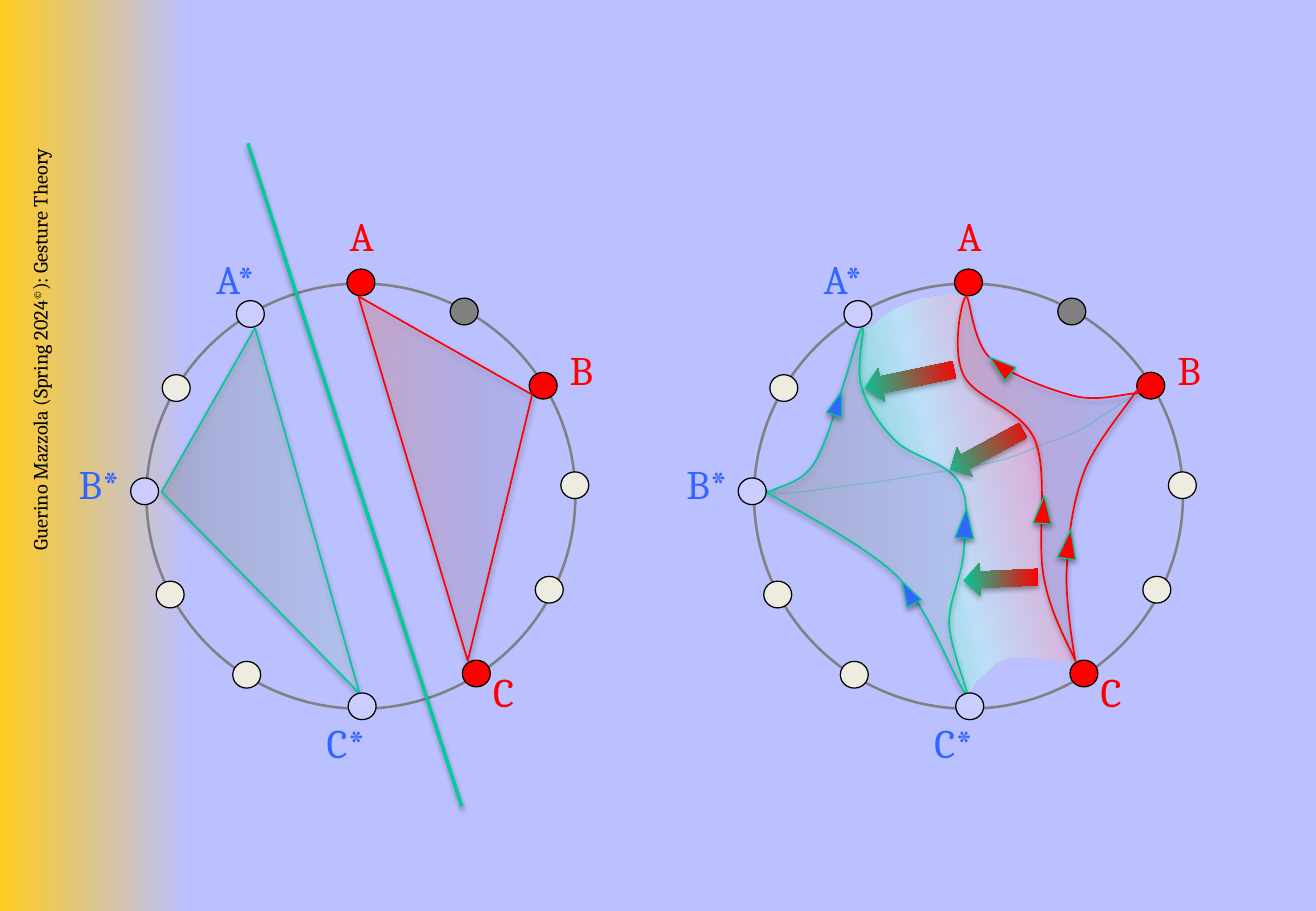
from lxml.etree import SubElement
from pptx import Presentation
from pptx.dml.color import RGBColor
from pptx.enum.shapes import MSO_CONNECTOR, MSO_SHAPE
from pptx.enum.text import PP_ALIGN
from pptx.oxml.ns import qn
from pptx.util import Inches, Pt

RED, BLUE, TEAL, GREEN = "FF0000", "3366FF", "00C896", "00CC99"
LILAC, IVORY, GRAY, BLACK = "CCCCFF", "EEECE1", "808080", "000000"
CLOCK_STEP = 5
RED_FADE = [(0, "FFA5B1", 40), (100, "ADADEB", 18)]
GREEN_FADE = [(0, "999999", 28), (100, "C2FFF0", 18)]
RIBBON_FADE = [(0, GREEN, 75), (43, "C2FFF0", 48), (71, "FFA5B1", 43), (100, RED, 30)]
ARROW_FADE = [(0, GREEN, 100), (100, RED, 100)]

DOTS = [
    (3.71, 2.45, GRAY), (4.36, 3.06, RED), (2.86, 2.21, RED), (4.62, 3.88, IVORY),
    (1.95, 2.47, LILAC), (1.34, 3.08, IVORY), (1.92, 5.44, IVORY), (1.29, 4.78, IVORY),
    (3.81, 5.43, RED), (4.41, 4.74, IVORY),
]
TOP_DOTS = [(2.87, 5.7, LILAC), (1.08, 3.93, LILAC)]
LABELS = [
    ("A", 2.78, 1.69, 0.44, RED), ("B", 4.59, 2.79, 0.43, RED), ("C", 3.96, 5.44, 0.43, RED),
    ("A*", 1.68, 2.04, 0.61, BLUE), ("B*", 0.55, 3.73, 0.6, BLUE), ("C*", 2.59, 5.86, 0.59, BLUE),
]
RED_TRIANGLE = [(2.95, 2.44), (4.38, 3.25), (3.85, 5.44)]
GREEN_TRIANGLE = [(2.1, 2.7), (2.96, 5.71), (1.33, 4.05)]
RIBBON = [
    (7.95, 2.47), (7.9, 2.4, 7.73, 2.44, 7.63, 2.45), (7.53, 2.47, 7.44, 2.51, 7.36, 2.55),
    (7.28, 2.59, 7.21, 2.67, 7.16, 2.7), (7.11, 2.72, 7.1, 2.66, 7.08, 2.71),
    (7.06, 2.76, 7.06, 2.9, 7.06, 2.99), (7.06, 3.09, 7.05, 3.17, 7.1, 3.27),
    (7.14, 3.36, 7.25, 3.5, 7.32, 3.58), (7.4, 3.66, 7.48, 3.71, 7.56, 3.75),
    (7.63, 3.79, 7.7, 3.79, 7.76, 3.83), (7.83, 3.87, 7.89, 3.96, 7.92, 3.99),
    (7.95, 4.01, 7.89, 3.95, 7.93, 4), (7.87, 4.06, 7.95, 4.14, 7.95, 4.24),
    (7.95, 4.33, 7.95, 4.46, 7.93, 4.56), (7.91, 4.67, 7.86, 4.78, 7.84, 4.86),
    (7.81, 4.95, 7.78, 4.93, 7.79, 5.07), (7.81, 5.21, 7.88, 5.61, 7.93, 5.69),
    (7.98, 5.77, 8.01, 5.61, 8.08, 5.57), (8.15, 5.52, 8.19, 5.44, 8.32, 5.42),
    (8.46, 5.4, 8.79, 5.46, 8.87, 5.46), (8.96, 5.45, 8.88, 5.49, 8.84, 5.4),
    (8.8, 5.32, 8.69, 5.08, 8.65, 4.96), (8.6, 4.84, 8.58, 4.82, 8.57, 4.66),
    (8.56, 4.51, 8.58, 4.22, 8.58, 4.05), (8.58, 3.88, 8.59, 3.77, 8.56, 3.66),
    (8.52, 3.56, 8.44, 3.47, 8.36, 3.41), (8.28, 3.34, 8.16, 3.33, 8.09, 3.27),
    (8.02, 3.22, 7.97, 3.17, 7.94, 3.1), (7.9, 3.04, 7.87, 2.99, 7.87, 2.89),
    (7.87, 2.78, 7.99, 2.54, 7.95, 2.47),
]
B_PATH = [
    (9.35, 3.24), (9.17, 3.36, 9, 3.48, 8.88, 3.54), (8.75, 3.61, 8.74, 3.6, 8.63, 3.64),
    (8.52, 3.68, 8.41, 3.74, 8.23, 3.79), (8.06, 3.83, 7.78, 3.88, 7.57, 3.91),
    (7.35, 3.95, 7.13, 3.98, 6.95, 4), (6.77, 4.03, 6.6, 4.05, 6.49, 4.06),
    (6.39, 4.06, 6.33, 4.04, 6.33, 4.04),
]
RED_GESTURE = [
    (7.95, 2.44), (7.98, 2.42, 8, 2.8, 8.14, 2.94), (8.29, 3.08, 8.64, 3.21, 8.84, 3.26),
    (9.04, 3.31, 9.25, 3.24, 9.34, 3.24), (9.42, 3.24, 9.4, 3.14, 9.33, 3.25),
    (9.26, 3.36, 9.01, 3.65, 8.92, 3.89), (8.83, 4.13, 8.79, 4.42, 8.78, 4.68),
    (8.76, 4.94, 8.85, 5.44, 8.85, 5.44), (8.8, 5.32, 8.64, 5.05, 8.59, 4.75),
    (8.53, 4.45, 8.63, 3.91, 8.52, 3.63), (8.41, 3.36, 8.03, 3.29, 7.93, 3.09),
    (7.83, 2.89, 7.91, 2.47, 7.95, 2.44),
]
GREEN_GESTURE = [
    (7.1, 2.7), (7.12, 2.7, 7.04, 3.03, 7.09, 3.18), (7.13, 3.34, 7.24, 3.5, 7.37, 3.63),
    (7.5, 3.76, 7.8, 3.81, 7.89, 3.97), (7.99, 4.12, 7.94, 4.37, 7.93, 4.56),
    (7.91, 4.76, 7.81, 4.94, 7.81, 5.13), (7.82, 5.32, 7.94, 5.62, 7.96, 5.71),
    (7.97, 5.8, 8.02, 5.83, 7.92, 5.67), (7.82, 5.51, 7.64, 5.01, 7.38, 4.74),
    (7.11, 4.48, 6.5, 4.17, 6.32, 4.06), (6.15, 3.94, 6.33, 4.05, 6.33, 4.05),
    (6.39, 4.01, 6.59, 3.98, 6.69, 3.83), (6.79, 3.69, 6.88, 3.36, 6.94, 3.17),
    (7.01, 2.97, 7.07, 2.69, 7.1, 2.7),
]
ARROWS = [
    (7.11, 2.98, 0.75, 0.28, 348.2), (7.78, 3.57, 0.68, 0.27, 331.5),
    (7.93, 4.63, 0.61, 0.27, 357.4),
]
ARROWHEADS = [
    (8.16, 2.9, 0.14, 0.22, 309.2, RED), (8.72, 4.36, 0.15, 0.24, 8.2, RED),
    (8.51, 4.08, 0.15, 0.23, 4.3, RED), (7.87, 4.19, 0.15, 0.24, 4.3, BLUE),
    (7.41, 4.78, 0.13, 0.2, 331, BLUE), (6.83, 3.22, 0.13, 0.2, 18, BLUE),
]


def rgb(color):
    return RGBColor.from_string(color)


def add_effects(sp, shadow):
    spPr = sp._element.spPr
    for old in spPr.findall(qn("a:effectLst")):
        spPr.remove(old)
    effects = SubElement(spPr, qn("a:effectLst"))
    if shadow:
        outer = SubElement(effects, qn("a:outerShdw"), blurRad="40000", dist="23000",
                           dir="5400000", rotWithShape="0")
        clr = SubElement(outer, qn("a:srgbClr"), val=BLACK)
        SubElement(clr, qn("a:alpha"), val="35000")


def set_gradient(sp, stops, angle):
    sp.fill.gradient()
    sp.fill.gradient_angle = (360 - angle) % 360
    gs_lst = sp._element.spPr.find(".//" + qn("a:gsLst"))
    for old in list(gs_lst):
        gs_lst.remove(old)
    for pos, color, alpha in stops:
        gs = SubElement(gs_lst, qn("a:gs"), pos=str(pos * 1000))
        clr = SubElement(gs, qn("a:srgbClr"), val=color)
        if alpha < 100:
            SubElement(clr, qn("a:alpha"), val=str(alpha * 1000))


def style(sp, fill=None, line=None, width=0.75, angle=0, shadow=False):
    if isinstance(fill, list):
        set_gradient(sp, fill, angle)
    elif fill:
        sp.fill.solid()
        sp.fill.fore_color.rgb = rgb(fill)
    else:
        sp.fill.background()
    if line:
        sp.line.color.rgb = rgb(line)
        sp.line.width = Pt(width)
    else:
        sp.line.fill.background()
    add_effects(sp, shadow)


def add_preset(s, kind, x, y, w, h, rot=0, **look):
    sp = s.shapes.add_shape(kind, Inches(x), Inches(y), Inches(w), Inches(h))
    sp.rotation = rot
    style(sp, **look)


def bend(sp, segments):
    lines = list(sp._element.spPr.iter(qn("a:lnTo")))
    for line, seg in zip(lines, segments):
        if len(seg) == 6:
            curve = line.makeelement(qn("a:cubicBezTo"))
            for x, y in zip(seg[::2], seg[1::2]):
                SubElement(curve, qn("a:pt"), x=str(Inches(x) - sp.left), y=str(Inches(y) - sp.top))
            line.getparent().replace(line, curve)


def add_outline(s, outline, close=True, **look):
    knots = [(Inches(seg[-2]), Inches(seg[-1])) for seg in outline]
    builder = s.shapes.build_freeform(*knots[0], scale=1.0)
    builder.add_line_segments(knots[1:], close=close)
    sp = builder.convert_to_shape()
    bend(sp, outline[1:])
    style(sp, **look)
    return sp


def add_text(s, runs, x, y, w, h, size, color, wrap=False, align=PP_ALIGN.LEFT, rot=0):
    tb = s.shapes.add_textbox(Inches(x), Inches(y), Inches(w), Inches(h))
    tb.rotation = rot
    tf = tb.text_frame
    tf.word_wrap = wrap
    p = tf.paragraphs[0]
    p.alignment = align
    for text, baseline in runs:
        r = p.add_run()
        r.text = text
        for name, value in {"name": "Cambria", "size": Pt(size)}.items():
            setattr(r.font, name, value)
        r.font.color.rgb = rgb(color)
        if baseline:
            r._r.get_or_add_rPr().set("baseline", str(baseline * 1000))
    return p


def add_dots(s, dots, dx):
    for x, y, color in dots:
        add_preset(s, MSO_SHAPE.OVAL, x + dx, y, 0.22, 0.23, 89.9, fill=color, line=BLACK)


def add_clock(s, dx, red_outline, green_outline):
    add_preset(s, MSO_SHAPE.OVAL, 1.22 + dx, 2.32, 3.5, 3.53, 89.9, line=GRAY, width=1.5)
    add_dots(s, DOTS, dx)
    add_outline(s, red_outline, fill=RED_FADE, line=RED, width=1, shadow=True)
    add_outline(s, green_outline, fill=GREEN_FADE, line=TEAL, width=1, shadow=True)
    for text, x, y, w, color in LABELS:
        add_text(s, [(text, 0)], x + dx, y, w, 0.51, 24, color)


def add_mirror_axis(s):
    line = s.shapes.add_connector(MSO_CONNECTOR.STRAIGHT, Inches(3.8), Inches(6.64),
                                  Inches(2.04), Inches(1.18))
    line.line.color.rgb = rgb(GREEN)
    line.line.width = Pt(2)
    add_effects(line, True)


def add_b_path(s):
    ln = add_outline(s, B_PATH, close=False, line=TEAL).line._get_or_add_ln()
    SubElement(ln.find(".//" + qn("a:srgbClr")), qn("a:alpha"), val="35000")
    SubElement(ln, qn("a:tailEnd"), type="stealth")


def main():
    prs = Presentation()
    prs.slide_width, prs.slide_height = Inches(10.83), Inches(7.5)
    s = prs.slides.add_slide(prs.slide_layouts[6])
    s.background.fill.solid()
    s.background.fill.fore_color.rgb = rgb("BBC0FF")
    add_preset(s, MSO_SHAPE.RECTANGLE, 0, 0, 1.54, 7.5,
               fill=[(0, "FFCB1F", 100), (100, "BBC0FF", 100)])
    credit = [("Guerino Mazzola (Spring 2024", 0), ("©", 30), ("): Gesture Theory ", 0)]
    p = add_text(s, credit, -2.4, 3.66, 5.65, 0.5, 12, BLACK, True, PP_ALIGN.RIGHT, 270)
    p.add_line_break()

    add_clock(s, 0, RED_TRIANGLE, GREEN_TRIANGLE)
    add_dots(s, TOP_DOTS, 0)
    add_mirror_axis(s)

    add_outline(s, RIBBON, fill=RIBBON_FADE, angle=346)
    add_b_path(s)
    add_clock(s, CLOCK_STEP, RED_GESTURE, GREEN_GESTURE)
    for x, y, w, h, rot in ARROWS:
        add_preset(s, MSO_SHAPE.LEFT_ARROW, x, y, w, h, rot, fill=ARROW_FADE, shadow=True)
    add_dots(s, TOP_DOTS, CLOCK_STEP)
    for x, y, w, h, rot, color in ARROWHEADS:
        add_preset(s, MSO_SHAPE.ISOSCELES_TRIANGLE, x, y, w, h, rot,
                   fill=color, line=TEAL, shadow=True)
    prs.save("out.pptx")


if __name__ == "__main__":
    main()
